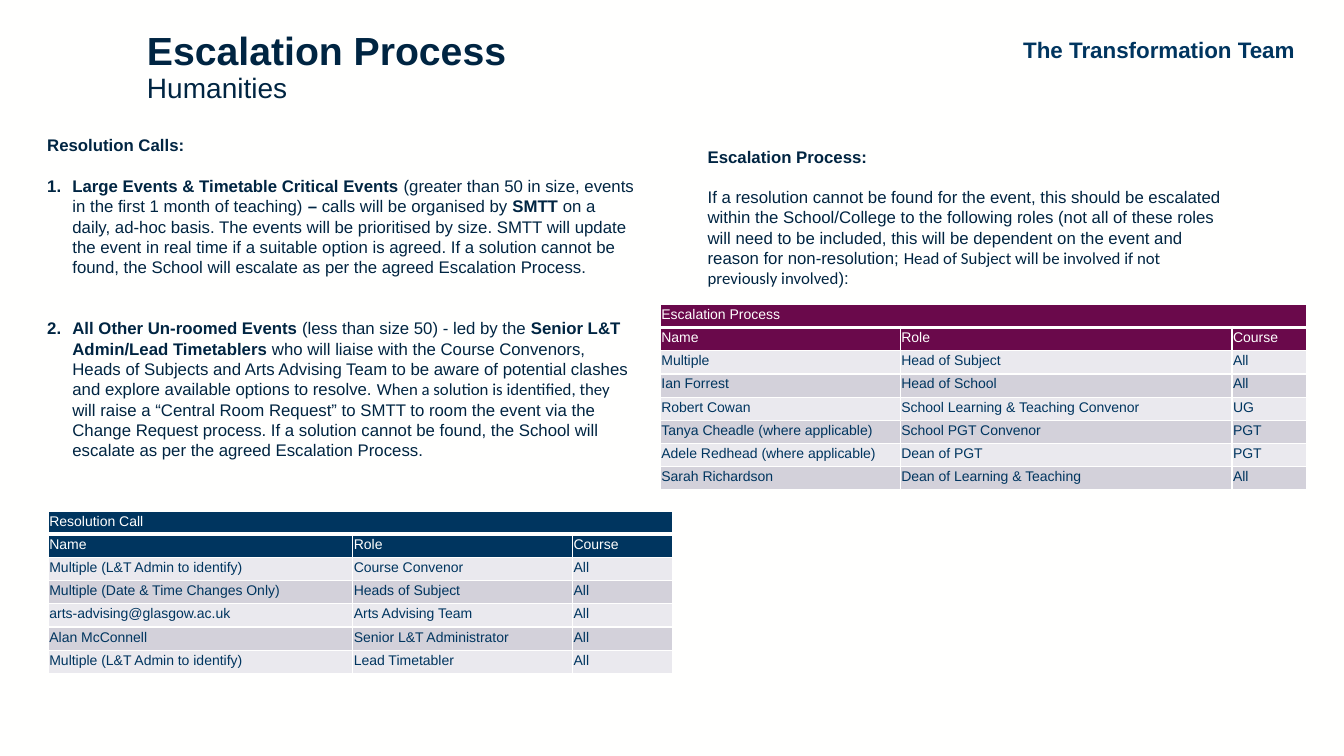
from lxml.etree import SubElement
from pptx import Presentation
from pptx.dml.color import RGBColor
from pptx.enum.text import MSO_ANCHOR, MSO_AUTO_SIZE, PP_ALIGN
from pptx.oxml.ns import qn
from pptx.util import Inches, Pt

PAPER = RGBColor(0xFF, 0xFF, 0xFE)
INK = RGBColor(0x00, 0x25, 0x42)
NAVY = RGBColor(0x00, 0x35, 0x5F)
PLUM = RGBColor(0x6A, 0x09, 0x4B)
BANDS = [RGBColor(0xEA, 0xE9, 0xEE), RGBColor(0xD3, 0xD1, 0xDA)]

PLAIN, STRONG, ASIDE = ("Arial", False), ("Arial", True), ("Calibri", False)
LINE = 14.5
ROW = 0.23

TEAM = "The Transformation Team"
TITLE, SUBJECT = "Escalation Process", "Humanities"

RESOLUTION_TEXT = [
    (0, False, [("Resolution Calls:", STRONG)]),
    (1, True, [
        ("Large Events & Timetable Critical Events ", STRONG),
        ("(greater than 50 in size, events in the first 1 month of teaching) ", PLAIN),
        ("– ", STRONG),
        ("calls will be organised by ", PLAIN),
        ("SMTT ", STRONG),
        ("on a daily, ad-hoc basis. The events will be prioritised by size. SMTT will "
         "update the event in real time if a suitable option is agreed. If a solution "
         "cannot be found, the School will escalate as per the agreed Escalation Process.", PLAIN),
    ]),
    (2, True, [
        ("All Other Un-roomed Events ", STRONG),
        ("(less than size 50) - led by the ", PLAIN),
        ("Senior L&T Admin/Lead Timetablers ", STRONG),
        ("who will liaise with the Course Convenors, Heads of Subjects and Arts Advising "
         "Team to be aware of potential clashes and explore available options to resolve. ", PLAIN),
        ("When a solution is identified, they", ASIDE),
        (" will raise a “Central Room Request” to SMTT to room the event via the Change "
         "Request process. If a solution cannot be found, the School will escalate as per "
         "the agreed Escalation Process.", PLAIN),
    ]),
]

ESCALATION_TEXT = [
    (0, False, [("Escalation Process: ", STRONG)]),
    (1, False, [
        ("If a resolution cannot be found for the event, this should be escalated within "
         "the School/College to the following roles (not all of these roles will need to "
         "be included, this will be dependent on the event and reason for non-resolution; ", PLAIN),
        ("Head of Subject will be involved if not previously involved", ASIDE),
        ("):", PLAIN),
    ]),
]

HEADINGS = ("Name", "Role", "Course")
RESOLUTION_ROWS = [
    ("Resolution Call", "", ""),
    HEADINGS,
    ("Multiple (L&T Admin to identify)", "Course Convenor", "All"),
    ("Multiple (Date & Time Changes Only)", "Heads of Subject", "All"),
    ("arts-advising@glasgow.ac.uk", "Arts Advising Team", "All"),
    ("Alan McConnell", "Senior L&T Administrator", "All"),
    ("Multiple (L&T Admin to identify)", "Lead Timetabler", "All"),
]
ESCALATION_ROWS = [
    ("Escalation Process", "", ""),
    HEADINGS,
    ("Multiple", "Head of Subject", "All"),
    ("Ian Forrest", "Head of School", "All"),
    ("Robert Cowan", "School Learning & Teaching Convenor", "UG"),
    ("Tanya Cheadle (where applicable)", "School PGT Convenor", "PGT"),
    ("Adele Redhead (where applicable)", "Dean of PGT", "PGT"),
    ("Sarah Richardson", "Dean of Learning & Teaching", "All"),
]


def style(run, size, color, face=PLAIN):
    run.font.name, run.font.bold = face
    run.font.size = Pt(size)
    run.font.color.rgb = color


def add_frame(slide, left, top, width, height):
    frame = slide.shapes.add_textbox(*map(Inches, (left, top, width, height))).text_frame
    frame.word_wrap = True
    frame.auto_size = MSO_AUTO_SIZE.NONE
    return frame


def add_body(slide, place, paragraphs):
    frame = add_frame(slide, *place)
    for index, (gap, numbered, parts) in enumerate(paragraphs):
        paragraph = frame.add_paragraph() if index else frame.paragraphs[0]
        paragraph.line_spacing = Pt(LINE)
        if gap:
            paragraph.space_before = Pt(gap * LINE)
        if numbered:
            props = paragraph._p.get_or_add_pPr()
            props.set("marL", str(Inches(0.25)))
            props.set("indent", str(-Inches(0.25)))
            SubElement(props, qn("a:buFont"), typeface="+mj-lt")
            SubElement(props, qn("a:buAutoNum"), type="arabicPeriod")
        for words, face in parts:
            run = paragraph.add_run()
            run.text = words
            style(run, 12, INK, face)


def add_borders(cell, bottom):
    props = cell._tc.get_or_add_tcPr()
    for side, width in (("L", 1), ("R", 1), ("T", 1), ("B", bottom)):
        line = SubElement(props, qn(f"a:ln{side}"), w=str(Pt(width)))
        SubElement(SubElement(line, qn("a:solidFill")), qn("a:srgbClr"), val=str(PAPER))


def add_roles(slide, left, top, widths, rows, accent, body_anchor):
    table = slide.shapes.add_table(
        len(rows), len(widths), Inches(left), Inches(top),
        Inches(sum(widths)), Inches(ROW * len(rows))).table
    table.first_row = table.horz_banding = False
    for column, width in zip(table.columns, widths):
        column.width = Inches(width)
    for r, row in enumerate(rows):
        heading = r < 2
        for c, words in enumerate(row):
            cell = table.cell(r, c)
            cell.margin_left = cell.margin_right = cell.margin_top = Inches(0.01)
            cell.margin_bottom = Inches(0.05)
            cell.vertical_anchor = MSO_ANCHOR.BOTTOM if heading else body_anchor
            add_borders(cell, 1 if r else 3)
            cell.fill.solid()
            cell.fill.fore_color.rgb = accent if heading else BANDS[r % 2]
            paragraph = cell.text_frame.paragraphs[0]
            paragraph.text = words
            paragraph.font.size = Pt(10)
            if not heading:
                paragraph.line_spacing = 1.07
                paragraph.space_after = Pt(8)
            for run in paragraph.runs:
                style(run, 10, PAPER if heading else NAVY)
    table.cell(0, 0).merge(table.cell(0, len(widths) - 1))


def main():
    deck = Presentation()
    deck.slide_width, deck.slide_height = Inches(13.33), Inches(7.5)
    slide = deck.slides.add_slide(deck.slide_layouts[6])
    slide.background.fill.solid()
    slide.background.fill.fore_color.rgb = PAPER

    team = add_frame(slide, 9.95, 0.31, 3.09, 0.37).paragraphs[0]
    team.text = TEAM
    team.alignment = PP_ALIGN.CENTER
    style(team.runs[0], 16, NAVY, STRONG)

    heading_frame = add_frame(slide, 1.36, 0.09, 4.23, 1.17)
    heading_frame.vertical_anchor = MSO_ANCHOR.MIDDLE
    heading = heading_frame.paragraphs[0]
    heading.text = f"{TITLE}\v{SUBJECT}"
    heading.line_spacing = 0.9
    style(heading.runs[0], 28, INK, STRONG)
    style(heading.runs[1], 20, INK)

    add_roles(slide, 0.48, 5.07, (3.02, 2.18, 0.99), RESOLUTION_ROWS, NAVY, MSO_ANCHOR.BOTTOM)
    add_roles(slide, 6.55, 3.02, (2.38, 3.29, 0.74), ESCALATION_ROWS, PLUM, MSO_ANCHOR.MIDDLE)
    add_body(slide, (6.92, 1.4, 5.42, 1.51), ESCALATION_TEXT)
    add_body(slide, (0.37, 1.29, 6.04, 4.14), RESOLUTION_TEXT)
    deck.save("out.pptx")


if __name__ == "__main__":
    main()
